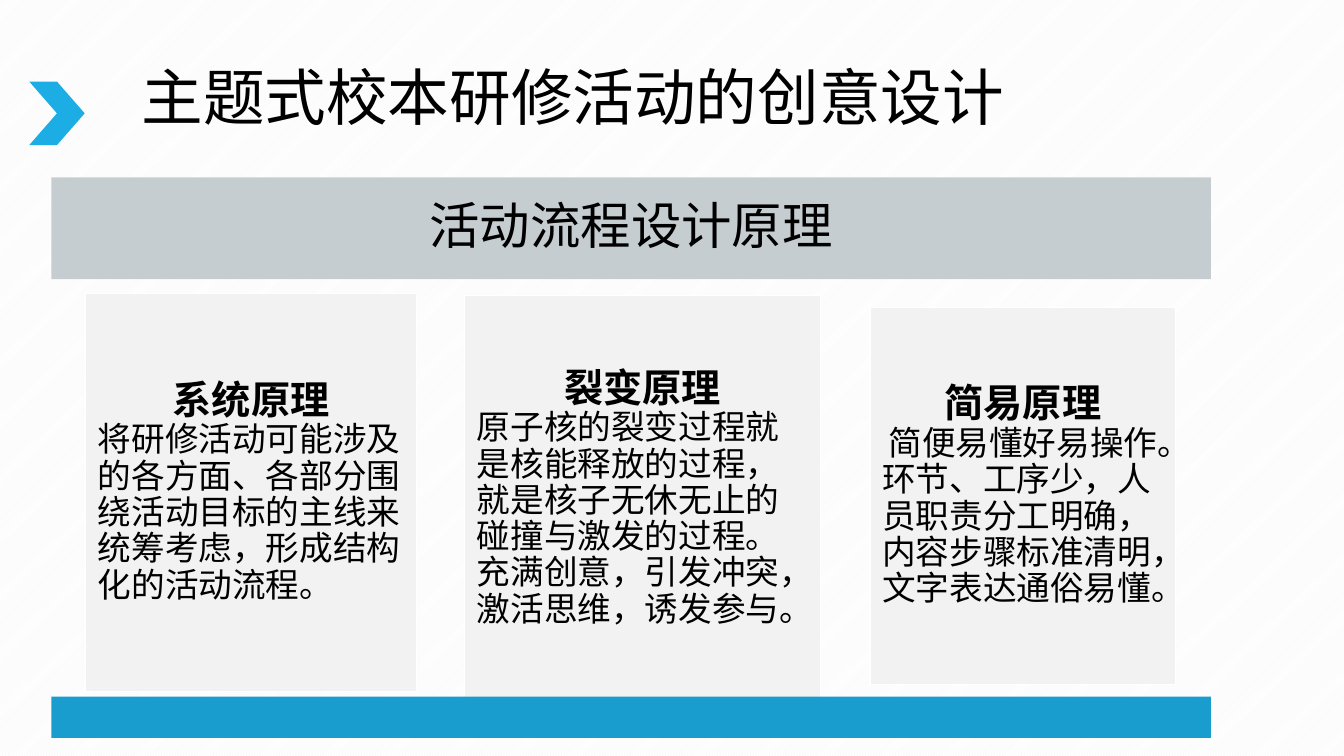
from pptx import Presentation
from pptx import util as u
from pptx.dml.color import RGBColor
from pptx.enum import dml, shapes, text
from pptx.oxml.ns import qn

FONT = "Noto Sans CJK SC"
BLACK = RGBColor(0x00, 0x00, 0x00)
WHITE = RGBColor(0xFF, 0xFF, 0xFF)
PALE = RGBColor(0xF2, 0xF2, 0xF2)
GREY = RGBColor(0xC6, 0xCD, 0xD1)
SKY = RGBColor(0x1C, 0xAD, 0xE4)
BLUE = RGBColor(0x19, 0x9D, 0xCF)
CENTER, LEFT = text.PP_ALIGN.CENTER, text.PP_ALIGN.LEFT


def add_block(kind, box, fill, line=None):
    """Add a flat filled shape, outlined only if a line colour is given."""
    shape = slide.shapes.add_shape(kind, *map(u.Inches, box))
    shape.shadow.inherit = False
    shape.fill.solid()
    shape.fill.fore_color.rgb = fill
    if line is None:
        shape.line.fill.background()
    else:
        shape.line.color.rgb = line
        shape.line.width = u.Pt(1)
    return shape


def write(shape, paragraphs, margin):
    """Fill a shape with (wording, size, bold, alignment) paragraphs."""
    frame = shape.text_frame
    frame_format = {"word_wrap": True, "auto_size": text.MSO_AUTO_SIZE.NONE,
                    "vertical_anchor": text.MSO_ANCHOR.MIDDLE}
    for side in ("left", "top", "right", "bottom"):
        frame_format["margin_" + side] = u.Inches(margin)
    for name, value in frame_format.items():
        setattr(frame, name, value)
    for index, (wording, size, bold, alignment) in enumerate(paragraphs):
        paragraph = frame.add_paragraph() if index else frame.paragraphs[0]
        paragraph.alignment = alignment
        paragraph.line_spacing = 0.9
        paragraph.space_before = paragraph.space_after = u.Pt(0)
        run = paragraph.add_run()
        run.text = wording
        font_format = {"name": FONT, "size": u.Pt(size), "bold": bold}
        for name, value in font_format.items():
            setattr(run.font, name, value)
        run.font.color.rgb = BLACK
        # East Asian typeface follows the Latin one
        latin = run.font._element.find(qn("a:latin"))
        east_asian = latin.makeelement(qn("a:ea"), {"typeface": FONT})
        latin.addnext(east_asian)


presentation = Presentation()
presentation.slide_width = u.Inches(13.33)
presentation.slide_height = u.Inches(7.5)
slide = presentation.slides.add_slide(presentation.slide_layouts[5])

# Striped background
background = slide.background.fill
background.patterned()
background.pattern = dml.MSO_PATTERN.LIGHT_UPWARD_DIAGONAL
background.fore_color.rgb = PALE
background.back_color.rgb = WHITE

# Title with chevron
add_block(shapes.MSO_SHAPE.CHEVRON, (0.29, 0.81, 0.55, 0.63), SKY)
title = slide.shapes.title
title_box = {"left": 1.12, "top": 0.64, "width": 9.13, "height": 0.71}
for name, value in title_box.items():
    setattr(title, name, u.Inches(value))
write(title, [("主题式校本研修活动的创意设计", 44, False, CENTER)], 0)

# Header band
header = add_block(shapes.MSO_SHAPE.RECTANGLE, (0.51, 1.76, 11.5, 1.01), GREY)
write(header, [("活动流程设计原理", 36, False, CENTER)], 0.15)

# Principle cards: box, heading, body paragraphs
cards = [
    ((0.85, 2.91, 3.28, 3.95), "系统原理", [
        ("将研修活动可能涉及的各方面、各部分围绕活动目标的主线来统筹考虑，形成结构化的活动流程。", LEFT)]),
    ((4.61, 2.93, 3.53, 4.03), "裂变原理", [
        ("原子核的裂变过程就是核能释放的过程，就是核子无休无止的碰撞与激发的过程。", LEFT),
        ("充满创意，引发冲突，激活思维，诱发参与。", LEFT)]),
    ((8.63, 3.05, 3.03, 3.74), "简易原理", [
        ("简便易懂好易操作。", CENTER),
        ("环节、工序少，人员职责分工明确，内容步骤标准清明，文字表达通俗易懂。", LEFT)]),
]
for box, heading, body in cards:
    card = add_block(shapes.MSO_SHAPE.RECTANGLE, box, PALE, WHITE)
    lines = [(wording, 24, False, alignment) for wording, alignment in body]
    write(card, [(heading, 28, True, CENTER)] + lines, 0.12)

# Bottom band
add_block(shapes.MSO_SHAPE.RECTANGLE, (0.51, 6.91, 11.5, 0.41), BLUE)

presentation.save("out.pptx")
